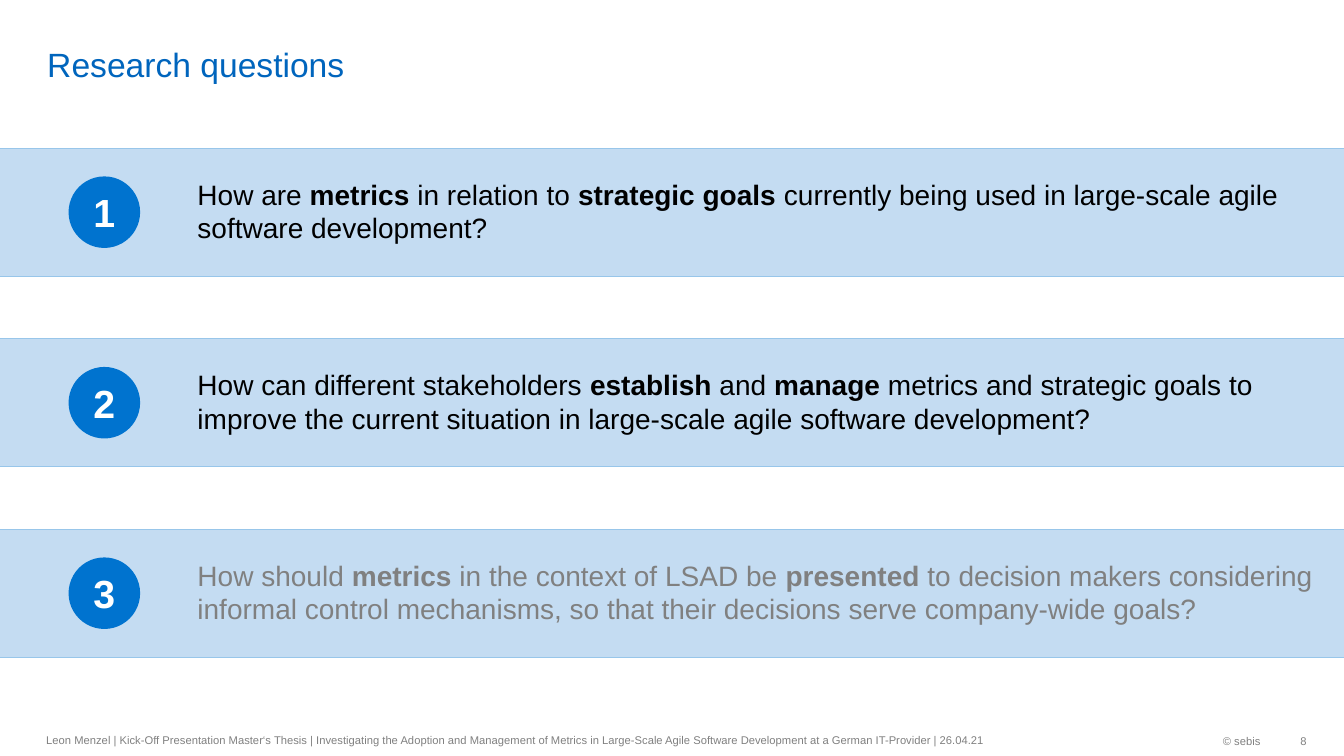
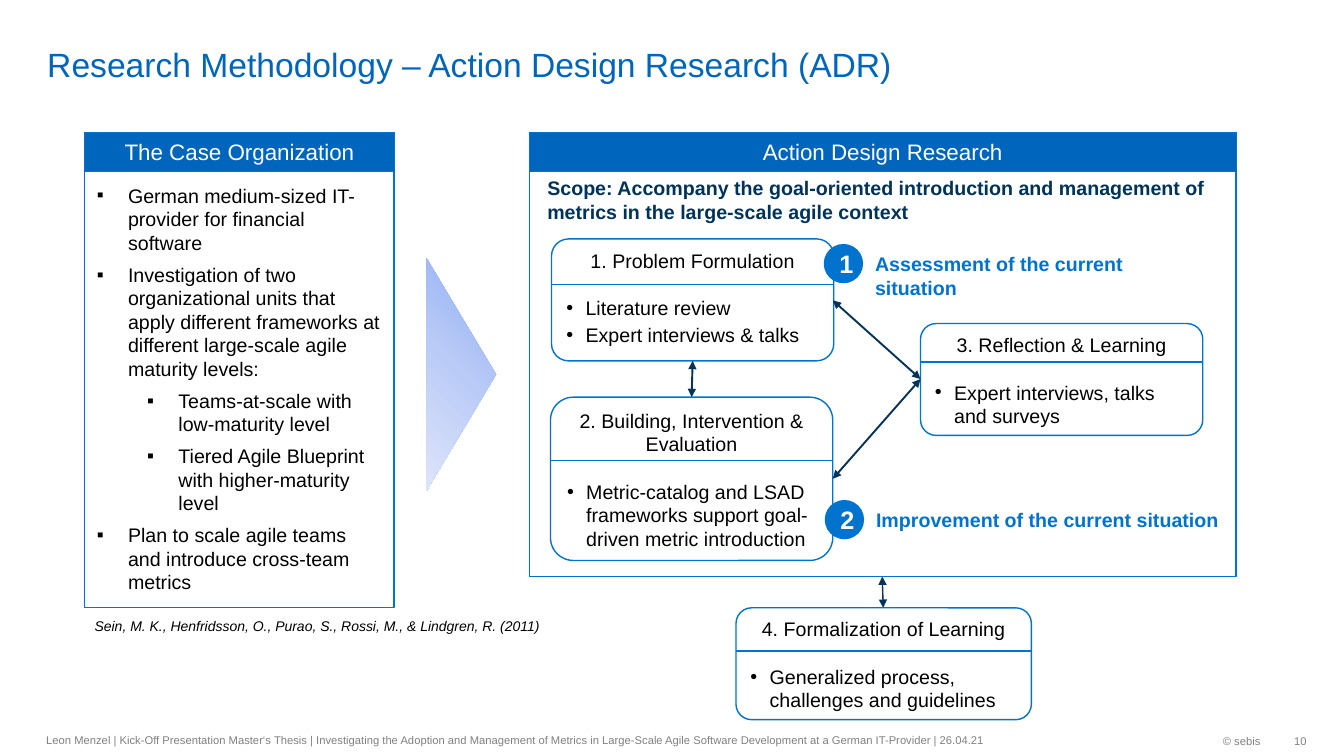
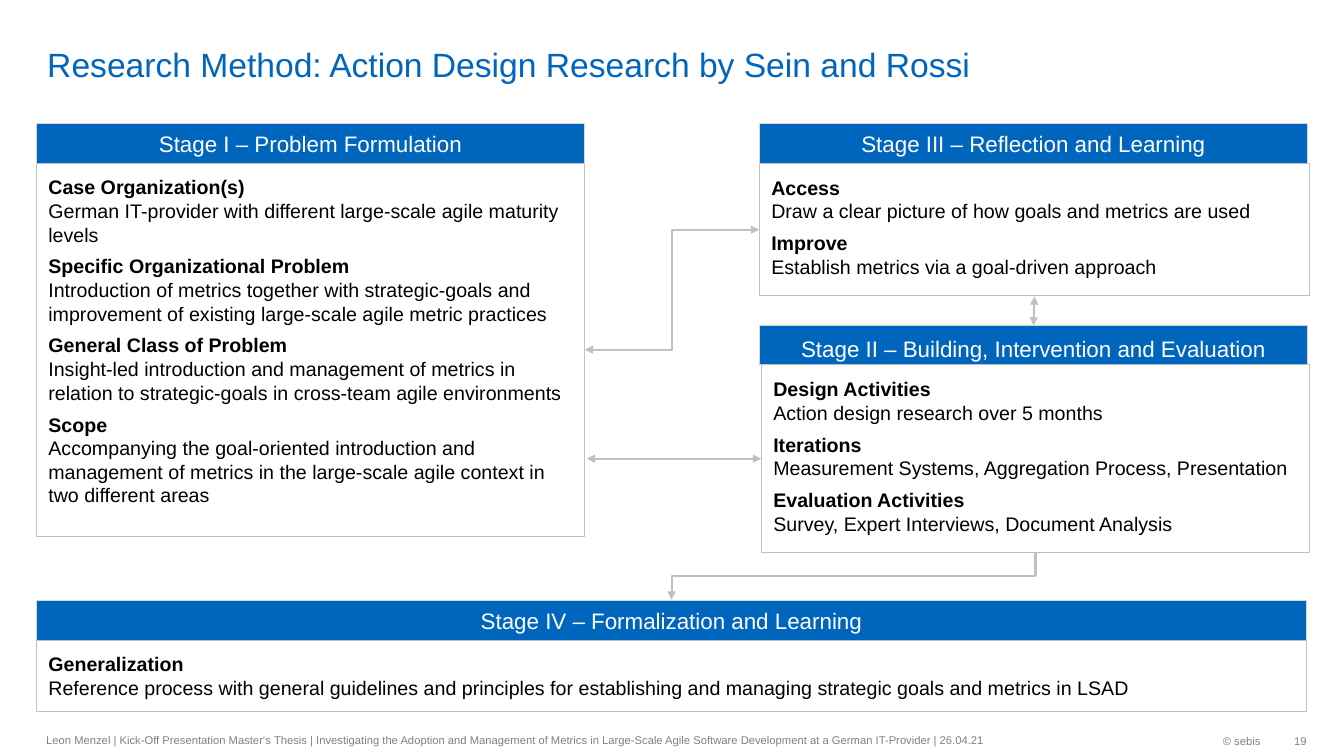
from dataclasses import dataclass
from typing import NamedTuple, Optional

from lxml import etree
from pptx import Presentation
from pptx.dml.color import RGBColor
from pptx.enum import shapes, text
from pptx.oxml import ns
from pptx.util import Inches, Pt

# Shared look
COLORS = {
    "title": "0065BD", "accent": "0073CF", "band": "C4DCF2", "band_line": "98C6EA",
    "navy": "003359", "arrow": "073359", "gray": "808080", "silver": "C0C0C0",
    "sand": "DAD7CB", "black": "000000", "white": "FFFFFF",
    "wedge_dark": "8CACF4", "wedge_mid": "BACBF7", "wedge_light": "DEE5FA",
}
FONT = "Arial"
BAR_HEIGHT = 0.39
FOOTER = ("Leon Menzel | Kick-Off Presentation Master‘s Thesis | Investigating the Adoption and "
          "Management of Metrics in Large-Scale Agile Software Development at a German "
          "IT-Provider | 26.04.21")
INSETS = (0.1, 0.05, 0.1, 0.05)
PANEL_INSETS = (0.12, 0.12, 0.12, 0.05)
LEFT, CENTER, RIGHT = text.PP_ALIGN.LEFT, text.PP_ALIGN.CENTER, text.PP_ALIGN.RIGHT
TOP, MIDDLE, BOTTOM = text.MSO_ANCHOR.TOP, text.MSO_ANCHOR.MIDDLE, text.MSO_ANCHOR.BOTTOM
Preset = shapes.MSO_SHAPE


class Area(NamedTuple):
    left: float
    top: float
    width: float
    height: float


class Point(NamedTuple):
    x: float
    y: float


@dataclass
class Para:
    """One paragraph; asterisks switch bold on and off."""
    words: str
    size: float = 14
    color: str = "black"
    bold: bool = False
    italic: bool = False
    align: int = LEFT
    before: float = 0
    after: float = 0
    bullet: str = ""
    margin: float = 0
    hang: float = 0


@dataclass
class Question:
    words: str
    color: str = "black"


@dataclass
class Card:
    """Rounded box with a heading, a rule and bullets."""
    area: Area
    rule_y: float
    heading: str
    bullets: list[str]


@dataclass
class Stage:
    heading: str
    left: float
    top: float
    width: float
    body_height: float
    entries: list[tuple[str, str]]
    shift: float = 0
    extra: float = 0
    bar_inset: float = 0.05


def rgb(name: str) -> RGBColor:
    return RGBColor.from_string(COLORS[name])


def child(parent, tag: str, **values: str):
    return etree.SubElement(parent, ns.qn(tag), values)


# Text
def write(box, paras: list[Para], anchor=TOP, insets=INSETS) -> None:
    frame = box.text_frame
    left, top, right, bottom = map(Inches, insets)
    frame_format = {"word_wrap": True, "vertical_anchor": anchor, "margin_left": left,
                    "margin_top": top, "margin_right": right, "margin_bottom": bottom}
    for name, value in frame_format.items():
        setattr(frame, name, value)
    for index, item in enumerate(paras):
        para = frame.add_paragraph() if index else frame.paragraphs[0]
        if item.bullet:
            props = para._p.get_or_add_pPr()
            props.set("marL", str(Inches(item.margin)))
            props.set("indent", str(-Inches(item.hang)))
            child(props, "a:buFont", typeface=FONT)
            child(props, "a:buChar", char=item.bullet)
        para_format = {"alignment": item.align, "space_before": Pt(item.before),
                       "space_after": Pt(item.after)}
        for name, value in para_format.items():
            setattr(para, name, value)
        for part, words in enumerate(item.words.split("*")):
            span = para.add_run()
            span.text = words
            font_format = {"name": FONT, "size": Pt(item.size), "italic": item.italic,
                           "bold": item.bold or part % 2 == 1}
            for name, value in font_format.items():
                setattr(span.font, name, value)
            span.font.color.rgb = rgb(item.color)


def add_text(page, area: Area, para: Para, anchor=TOP, insets=INSETS) -> None:
    write(page.shapes.add_textbox(*map(Inches, area)), [para], anchor, insets)


# Shapes and lines
def add_box(page, preset, area: Area, fill: Optional[str] = None,
            line: Optional[str] = None, weight: float = 0.75):
    box = page.shapes.add_shape(preset, *map(Inches, area))
    box.shadow.inherit = False
    if fill:
        box.fill.solid()
        box.fill.fore_color.rgb = rgb(fill)
    else:
        box.fill.background()
    if line:
        box.line.color.rgb = rgb(line)
        box.line.width = Pt(weight)
    else:
        box.line.fill.background()
    return box


def add_line(page, start: Point, end: Point, color: str, weight: float,
             heads: tuple[str, ...] = (), kind=shapes.MSO_CONNECTOR.STRAIGHT,
             upright: bool = False) -> None:
    """Draw a line; an upright elbow leaves its start vertically."""
    if upright:
        mid = Point((start.x + end.x) / 2, (start.y + end.y) / 2)
        start, end = (Point(mid.x + p.y - mid.y, mid.y - p.x + mid.x) for p in (start, end))
    line = page.shapes.add_connector(kind, *map(Inches, (*start, *end)))
    line.line.color.rgb = rgb(color)
    line.line.width = Pt(weight)
    props = line._element.spPr
    if upright:
        props.find(ns.qn("a:xfrm")).set("rot", str(90 * 60000))
    for head in heads:
        child(props.find(ns.qn("a:ln")), head, type="triangle")
    child(props, "a:effectLst")


BOTH_HEADS = ("a:headEnd", "a:tailEnd")


def add_badge(page, left: float, top: float, side: float, number: int, size: float) -> None:
    badge = add_box(page, Preset.OVAL, Area(left, top, side, side), "accent")
    write(badge, [Para(str(number), size, "white", bold=True, align=CENTER)], MIDDLE)


def add_bar(page, left: float, top: float, width: float, heading: str, line: str,
            inset: float = 0.05) -> None:
    bar = add_box(page, Preset.RECTANGLE, Area(left, top, width, BAR_HEIGHT), "title", line)
    write(bar, [Para(heading, 16, "white", align=CENTER)], MIDDLE, (0.1, inset, 0.1, 0.05))


def add_card(page, card: Card) -> None:
    box = add_box(page, Preset.ROUNDED_RECTANGLE, card.area, line="accent", weight=1)
    box.adjustments[0] = 0.14
    bullets = [Para(words, before=0 if index else 17, after=2, bullet="•",
                    margin=0.19, hang=0.19) for index, words in enumerate(card.bullets)]
    write(box, [Para(card.heading, align=CENTER), *bullets])
    left, right = card.area.left, card.area.left + card.area.width
    add_line(page, Point(left, card.rule_y), Point(right, card.rule_y), "accent", 1)


def add_wedge(page) -> None:
    wedge = add_box(page, Preset.TRAPEZOID, Area(3.42, 3.37, 2.31, 0.69))
    wedge.adjustments[0] = 1.71
    wedge.rotation = 90
    props = wedge._element.spPr
    gradient = etree.Element(ns.qn("a:gradFill"), rotWithShape="1")
    stops = child(gradient, "a:gsLst")
    for place, name in ((0, "wedge_dark"), (50, "wedge_mid"), (100, "wedge_light")):
        stop = child(stops, "a:gs", pos=str(place * 1000))
        child(stop, "a:srgbClr", val=COLORS[name])
    child(gradient, "a:lin", ang=str(45 * 60000), scaled="0")
    props.replace(props.find(ns.qn("a:noFill")), gradient)


def add_stage(page, stage: Stage) -> None:
    add_bar(page, stage.left, stage.top, stage.width, stage.heading, "sand", stage.bar_inset)
    area = Area(stage.left + stage.shift, stage.top + BAR_HEIGHT,
                stage.width + stage.extra, stage.body_height)
    paras = []
    for label, words in stage.entries:
        paras += [Para(label, bold=True), Para(words, after=6)]
    write(add_box(page, Preset.RECTANGLE, area, line="silver"), paras, insets=PANEL_INSETS)


def new_page(deck, title: str, number: int):
    page = deck.slides.add_slide(deck.slide_layouts[6])
    add_text(page, Area(0.37, 0.05, 11.58, 0.79), Para(title, 24, "title"),
             BOTTOM, (0.1, 0, 0.1, 0))
    add_text(page, Area(0.36, 7.18, 9.9, 0.32), Para(FOOTER, 8, "gray"), MIDDLE)
    add_text(page, Area(10.26, 7.19, 2.34, 0.32), Para("© sebis", 8, "gray", align=RIGHT), MIDDLE)
    add_text(page, Area(12.6, 7.19, 0.36, 0.32), Para(str(number), 8, "gray", align=RIGHT),
             MIDDLE, (0.1, 0.05, 0, 0.05))
    return page


# Slide: research questions
QUESTIONS = [
    Question("How are *metrics* in relation to *strategic goals* currently being used in "
             "large-scale agile software development?"),
    Question("How can different stakeholders *establish* and *manage* metrics and strategic "
             "goals to improve the current situation in large-scale agile software development?"),
    Question("How should *metrics* in the context of LSAD be *presented* to decision makers "
             "considering informal control mechanisms, so that their decisions serve "
             "company-wide goals?", "gray"),
]


def build_questions(deck) -> None:
    page = new_page(deck, "Research questions", 8)
    for index, question in enumerate(QUESTIONS):
        top = 1.47 + index * 1.89
        add_box(page, Preset.RECTANGLE, Area(-0.11, top, 13.54, 1.27), "band", "band_line")
        add_badge(page, 0.68, top + 0.28, 0.71, index + 1, 28)
        add_text(page, Area(1.86, top + 0.24, 11.42, 0.77),
                 Para(question.words, 20, question.color))


# Slide: methodology
CASE_POINTS = [
    (0, "German medium-sized IT-provider for financial software"),
    (0, "Investigation of two organizational units that apply different frameworks at "
        "different large-scale agile maturity levels:"),
    (1, "Teams-at-scale with low-maturity level"),
    (1, "Tiered Agile Blueprint with higher-maturity level"),
    (0, "Plan to scale agile teams and introduce cross-team metrics"),
]
CARDS = [
    Card(Area(5.47, 2.37, 2.8, 1.21), 2.82, "1. Problem Formulation",
         ["Literature review", "Expert interviews & talks"]),
    Card(Area(5.46, 3.94, 2.8, 1.62), 4.57, "2. Building, Intervention & Evaluation",
         ["Metric-catalog and LSAD frameworks support goal-driven metric introduction"]),
    Card(Area(9.13, 3.21, 2.8, 1.11), 3.59, "3. Reflection & Learning",
         ["Expert interviews, talks and surveys"]),
    Card(Area(7.3, 6.03, 2.93, 1.11), 6.46, "4. Formalization of Learning",
         ["Generalized process, challenges and guidelines"]),
]
CARD_ARROWS = [
    (Point(6.87, 3.58), Point(6.86, 3.94), 1.35),
    (Point(8.26, 2.98), Point(9.13, 3.76), 1.35),
    (Point(8.26, 4.75), Point(9.13, 3.76), 1.35),
    (Point(8.76, 6.03), Point(8.75, 5.72), 1),
]


def build_methodology(deck) -> None:
    page = new_page(deck, "Research Methodology – Action Design Research (ADR)", 10)
    # Research goals
    add_badge(page, 8.17, 2.42, 0.39, 1, 18)
    add_badge(page, 8.18, 4.96, 0.39, 2, 18)
    add_text(page, Area(8.58, 2.45, 3.51, 0.34),
             Para("Assessment of the current situation", color="accent", bold=True))
    add_text(page, Area(8.59, 4.99, 3.75, 0.34),
             Para("Improvement of the current situation", color="accent", bold=True))
    # Case organization
    add_bar(page, 0.84, 1.31, 3.07, "The Case Organization", "accent")
    panel = add_box(page, Preset.RECTANGLE, Area(0.84, 1.7, 3.07, 4.33), line="accent", weight=1)
    write(panel, [Para(words, after=6, bullet="▪", margin=0.31 + 0.5 * level, hang=0.31)
                  for level, words in CASE_POINTS], insets=PANEL_INSETS)
    add_text(page, Area(0.84, 6.08, 4.83, 0.27),
             Para("Sein, M. K., Henfridsson, O., Purao, S., Rossi, M., & Lindgren, R. (2011)",
                  10, italic=True))
    add_wedge(page)
    # Action design research
    add_bar(page, 5.25, 1.31, 7.01, "Action Design Research", "accent")
    add_box(page, Preset.RECTANGLE, Area(5.25, 1.7, 7.01, 4.02), line="accent", weight=1)
    add_text(page, Area(5.33, 1.7, 6.93, 0.57),
             Para("Scope: Accompany the goal-oriented introduction and management of metrics "
                  "in the large-scale agile context", color="navy", bold=True))
    for card in CARDS:
        add_card(page, card)
    for start, end, weight in CARD_ARROWS:
        add_line(page, start, end, "arrow", weight, BOTH_HEADS)


# Slide: stages
STAGES = [
    Stage("Stage I – Problem Formulation", 0.36, 1.23, 5.44, 3.7, [
        ("Case Organization(s)",
         "German IT-provider with different large-scale agile maturity levels"),
        ("Specific Organizational Problem",
         "Introduction of metrics together with strategic-goals and improvement of existing "
         "large-scale agile metric practices"),
        ("General Class of Problem",
         "Insight-led introduction and management of metrics in relation to strategic-goals "
         "in cross-team agile environments"),
        ("Scope",
         "Accompanying the goal-oriented introduction and management of metrics in the "
         "large-scale agile context in two different areas")]),
    Stage("Stage II – Building, Intervention and Evaluation", 7.53, 3.23, 5.44, 1.86, [
        ("Design Activities", "Action design research over 5 months"),
        ("Iterations", "Measurement Systems, Aggregation Process, Presentation"),
        ("Evaluation Activities", "Survey, Expert Interviews, Document Analysis")],
        shift=0.02, bar_inset=0.12),
    Stage("Stage III – Reflection and Learning", 7.53, 1.23, 5.44, 1.31, [
        ("Access", "Draw a clear picture of how goals and metrics are used"),
        ("Improve", "Establish metrics via a goal-driven approach")], extra=0.02),
    Stage("Stage IV – Formalization and Learning", 0.36, 5.96, 12.6, 0.71, [
        ("Generalization",
         "Reference process with general guidelines and principles for establishing and "
         "managing strategic goals and metrics in LSAD")]),
]


def build_stages(deck) -> None:
    page = new_page(deck, "Research Method: Action Design Research by Sein and Rossi", 19)
    for stage in STAGES:
        add_stage(page, stage)
    elbow = shapes.MSO_CONNECTOR.ELBOW
    add_line(page, Point(5.82, 4.55), Point(7.55, 4.55), "silver", 1.5, BOTH_HEADS)
    add_line(page, Point(10.26, 2.94), Point(10.25, 3.23), "silver", 1.5, BOTH_HEADS)
    add_line(page, Point(5.8, 3.47), Point(7.53, 2.28), "silver", 1.5, BOTH_HEADS, elbow)
    add_line(page, Point(6.66, 5.95), Point(10.27, 5.48), "silver", 1.5, BOTH_HEADS[:1],
             elbow, upright=True)


def main() -> None:
    deck = Presentation()
    deck.slide_width, deck.slide_height = Inches(13.33), Inches(7.5)
    for build in (build_questions, build_methodology, build_stages):
        build(deck)
    deck.save("out.pptx")


if __name__ == "__main__":
    main()
